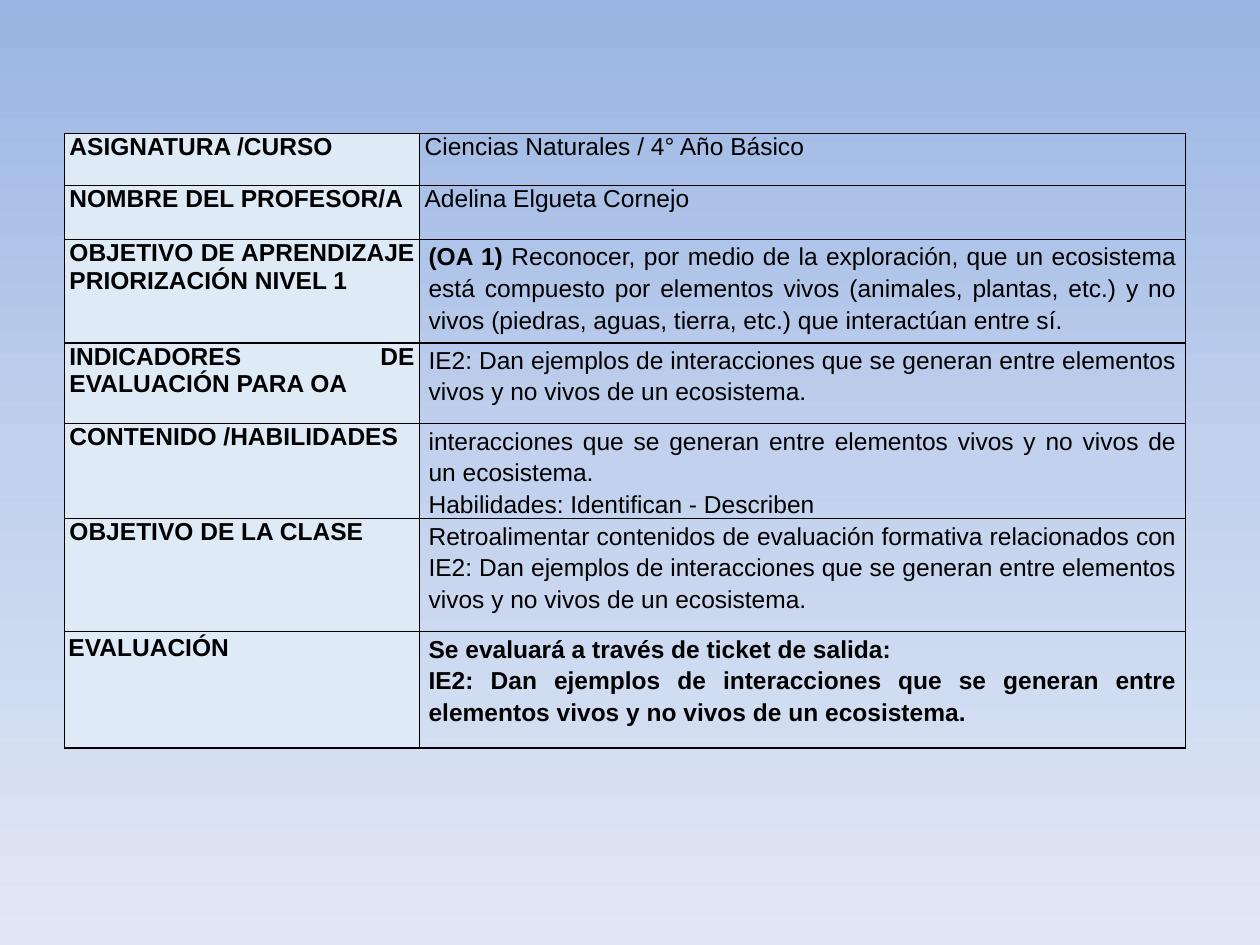
from copy import deepcopy

from lxml import etree
from pptx import Presentation
from pptx import util as u
from pptx.dml.color import RGBColor
from pptx.enum import text
from pptx.oxml import ns

BLACK = RGBColor(0x00, 0x00, 0x00)
LABEL_FILL = RGBColor(0xDE, 0xEA, 0xF6)
SKY = [(0, RGBColor(0x9A, 0xB5, 0xE4)),
       (0.5, RGBColor(0xC2, 0xD1, 0xED)),
       (1, RGBColor(0xE1, 0xE8, 0xF5))]

# Lesson plan: label, paragraphs of (text, bold) spans, row height in cm
EXAMPLES = ("IE2: Dan ejemplos de interacciones que se generan entre elementos "
            "vivos y no vivos de un ecosistema.")
SHORT_ROWS = [
    ("ASIGNATURA /CURSO", [[("Ciencias Naturales / 4° Año Básico", False)]], 1.05),
    ("NOMBRE DEL PROFESOR/A", [[("Adelina Elgueta Cornejo", False)]], 1.09),
]
LONG_ROWS = [
    ("OBJETIVO DE APRENDIZAJE PRIORIZACIÓN NIVEL 1",
     [[("(OA 1) ", True),
       ("Reconocer, por medio de la exploración, que un ecosistema está compuesto "
        "por elementos vivos (animales, plantas, etc.) y no vivos (piedras, aguas, "
        "tierra, etc.) que interactúan entre sí.", False)]], 2.08),
    ("INDICADORES DE EVALUACIÓN PARA OA", [[(EXAMPLES, False)]], 1.63),
    ("CONTENIDO /HABILIDADES",
     [[("interacciones que se generan entre elementos vivos y no vivos de un "
        "ecosistema.", False)],
      [("Habilidades: Identifican - Describen", False)]], 1.37),
    ("OBJETIVO DE LA CLASE",
     [[("Retroalimentar contenidos de evaluación formativa relacionados con "
        + EXAMPLES, False)]], 2.28),
    ("EVALUACIÓN",
     [[("Se evaluará a través de ticket de salida: ", True)],
      [(EXAMPLES, True)]], 2.34),
]


def write(para, words, *, font="Arial", size=14, bold=False, color=BLACK,
          spacing=None):
    """Add one formatted span to a justified paragraph."""
    para.alignment = text.PP_ALIGN.JUSTIFY
    if spacing:
        para.line_spacing = spacing
    span = para.add_run()
    span.text = words
    span.font.name, span.font.size = font, u.Pt(size)
    span.font.bold, span.font.color.rgb = bold, color


class LessonPage:
    def __init__(self, page, border=BLACK, border_width=1):
        self.page = page
        self.border, self.border_width = border, border_width

    def background(self, stops, angle):
        fill = self.page.background.fill
        fill.gradient()
        fill.gradient_angle = angle
        stop_list = self.page.element.find(".//" + ns.qn("a:gsLst"))
        while len(stop_list) < len(stops):
            stop_list.append(deepcopy(stop_list[-1]))
        for stop, (position, color) in zip(fill.gradient_stops, stops):
            stop.position, stop.color.rgb = position, color

    def table(self, left, top, widths, heights):
        frame = self.page.shapes.add_table(
            len(heights), len(widths), u.Cm(left), u.Cm(top),
            u.Cm(sum(widths)), u.Cm(sum(heights)))
        table = frame.table
        table.first_row = table.horz_banding = False
        for column, width in zip(table.columns, widths):
            column.width = u.Cm(width)
        for row, height in zip(table.rows, heights):
            row.height = u.Cm(height)
        return table

    def cell(self, cell, paragraphs, side=0.1, edge=0, fill=None, spacing=None):
        cell.margin_left = cell.margin_right = u.Cm(side)
        cell.margin_top = cell.margin_bottom = u.Cm(edge)
        self.borders(cell)
        if fill:
            cell.fill.solid()
            cell.fill.fore_color.rgb = fill
        else:
            cell.fill.background()
        frame = cell.text_frame
        for index, spans in enumerate(paragraphs):
            para = frame.add_paragraph() if index else frame.paragraphs[0]
            for words, bold in spans:
                write(para, words, bold=bold, spacing=spacing)

    def borders(self, cell):
        properties = cell._tc.get_or_add_tcPr()
        for name in ("a:lnL", "a:lnR", "a:lnT", "a:lnB"):
            line = etree.SubElement(properties, ns.qn(name),
                                    w=str(u.Pt(self.border_width)))
            solid = etree.SubElement(line, ns.qn("a:solidFill"))
            etree.SubElement(solid, ns.qn("a:srgbClr"), val=str(self.border))


def main():
    deck = Presentation()
    deck.slide_width, deck.slide_height = u.Cm(25.4), u.Cm(19.05)
    lesson = LessonPage(deck.slides.add_slide(deck.slide_layouts[6]))

    # Sky gradient from top to bottom
    lesson.background(SKY, angle=270)

    # Plan table: labels on the left, contents on the right
    rows = SHORT_ROWS + LONG_ROWS
    table = lesson.table(1.3, 2.69, [7.16, 15.44], [row[2] for row in rows])
    for index, (label, paragraphs, _) in enumerate(rows):
        last = index == len(rows) - 1
        lesson.cell(table.cell(index, 0), [[(label, True)]], fill=LABEL_FILL,
                    side=0.08 if last else 0.1, edge=0.05 if last else 0)
        is_long = index >= len(SHORT_ROWS)
        lesson.cell(table.cell(index, 1), paragraphs,
                    side=0.18 if is_long else 0.1,
                    spacing=1.15 if is_long else None)

    deck.save("out.pptx")


if __name__ == "__main__":
    main()
